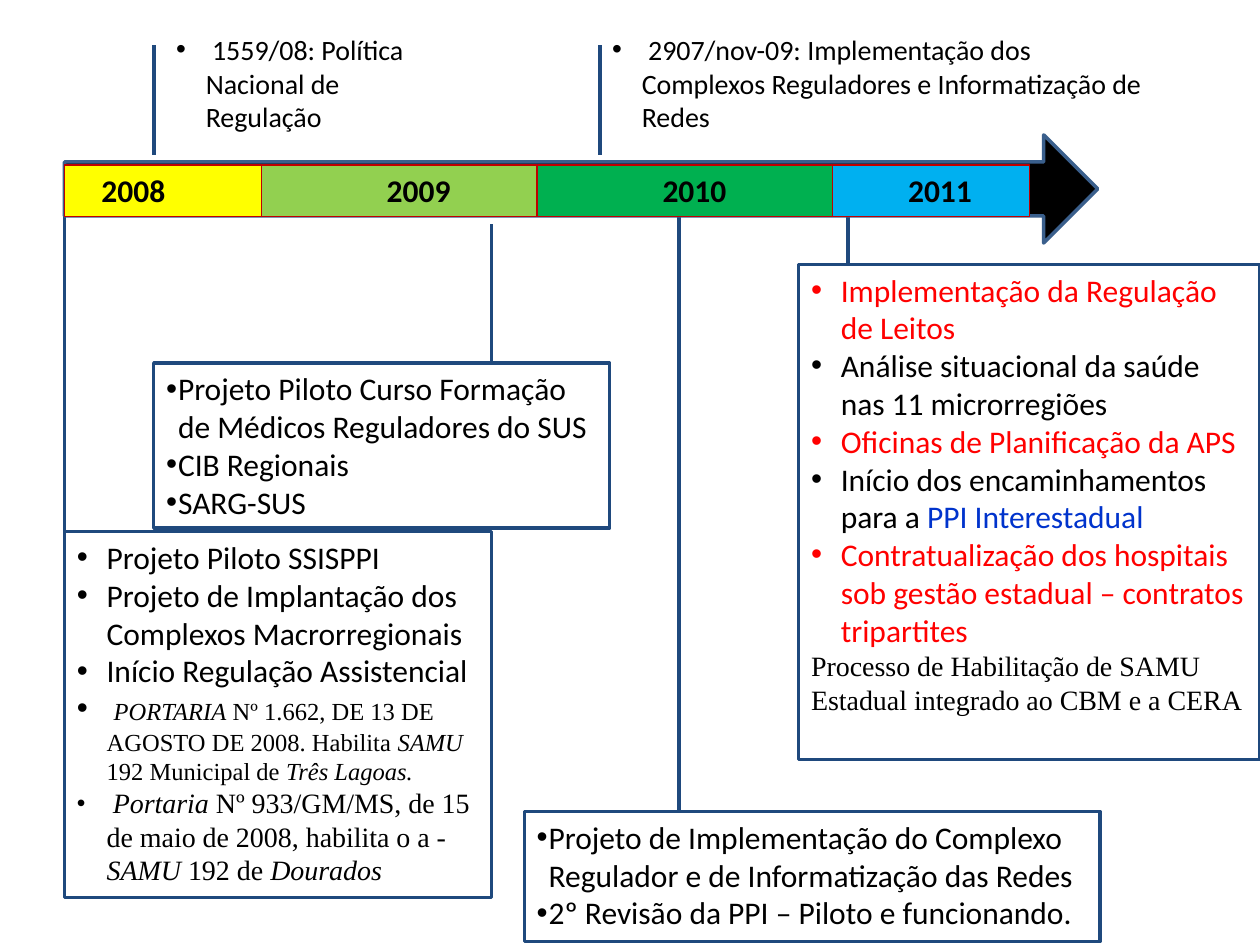
import pptx
import pptx.util
import pptx.dml.color
import pptx.enum.shapes
import pptx.enum.text
import pptx.oxml
import pptx.oxml.ns

Cm = pptx.util.Cm
Pt = pptx.util.Pt
Kind = pptx.enum.shapes.MSO_SHAPE
Align = pptx.enum.text.PP_ALIGN
NAVY, BLACK, RED, BLUE = "1F497D", "000000", "FF0000", "0033CC"
SANS, SERIF = "Calibri", "Times New Roman"


def paint(target, code):
    target.rgb = pptx.dml.color.RGBColor.from_string(code)


def node(tag, **attrs):
    item = pptx.oxml.parse_xml(f"<a:{tag} {pptx.oxml.ns.nsdecls('a')}/>")
    for name, value in attrs.items():
        item.set(name, value)
    return item


def part(text, size=18, font=SANS, color=BLACK, bold=False, slant=False):
    return text, size, font, color, bold, slant


def serif(text, size=14, slant=False):
    return part(text, size, SERIF, slant=slant)


class Board:
    def __init__(self, deck):
        self.slide = deck.slides.add_slide(deck.slide_layouts[6])
        self.shapes = self.slide.shapes

    def line(self, x, top, end, width=2.25):
        link = self.shapes.add_connector(
            pptx.enum.shapes.MSO_CONNECTOR.STRAIGHT, Cm(x), Cm(top), Cm(x), Cm(end))
        paint(link.line.color, NAVY)
        link.line.width = Pt(width)
        link._element.spPr.append(node("effectLst"))

    def shape(self, kind, place, edge, width, fill=None):
        item = self.shapes.add_shape(kind, *map(Cm, place))
        item.shadow.inherit = False
        if fill:
            item.fill.solid()
            paint(item.fill.fore_color, fill)
        else:
            item.fill.background()
        paint(item.line.color, edge)
        item.line.width = Pt(width)
        return item

    def label(self, item, paras, indent=0.6, align=Align.LEFT):
        frame = item.text_frame
        frame.word_wrap = True
        frame.vertical_anchor = pptx.enum.text.MSO_ANCHOR.TOP
        for index, (bullet, parts) in enumerate(paras):
            para = frame.add_paragraph() if index else frame.paragraphs[0]
            para.alignment = align
            if bullet:
                props = para._p.get_or_add_pPr()
                props.set("marL", str(Cm(indent)))
                props.set("indent", str(-Cm(indent)))
                props.append(node("buFont", typeface="Arial"))
                props.append(node("buChar", char="•"))
            for text, size, font, color, bold, slant in parts:
                run = para.add_run()
                run.text = text
                run.font.size = Pt(size)
                run.font.name = font
                run.font.bold = bold
                run.font.italic = slant
                paint(run.font.color, color)

    def text(self, place, paras, **style):
        self.label(self.shapes.add_textbox(*map(Cm, place)), paras, **style)

    def box(self, place, paras, **style):
        self.label(self.shape(Kind.RECTANGLE, place, NAVY, 2), paras, **style)


def items(*texts):
    return [(True, [part(text)]) for text in texts]


def main():
    deck = pptx.Presentation()
    deck.slide_width, deck.slide_height = Cm(25.4), Cm(19.05)
    board = Board(deck)

    board.line(17.09, 4.32, 5.33, 2)
    board.line(13.69, 4.32, 16.33)
    board.line(9.91, 4.52, 7.32, 2)
    board.line(1.3, 4.32, 12.32)
    for x in (12.09, 3.1):
        board.line(x, 0.91, 3.12)

    board.shape(Kind.RIGHT_ARROW, (1.3, 2.72, 20.83, 2.18), "3A5F8C", 2, BLACK)
    years = [("2008", 3.97, "FFFF00", 0.4), ("2009", 5.56, "92D050", 2.18),
             ("2010", 5.95, "00B050", 2.18), ("2011", 3.97, "00B0F0", 1.18)]
    left = 1.3
    for year, width, fill, shift in years:
        board.shape(Kind.RECTANGLE, (left, 3.33, width, 1.04), "C00000", 0.75, fill)
        board.text((left + shift, 3.33, 1.98, 1.02),
                   [(False, [part(year, bold=True)])], align=Align.CENTER)
        left += width

    notes = [(3.3, 5.99, " 1559/08: Política Nacional de Regulação"),
             (12.09, 11.4, " 2907/nov-09: Implementação dos Complexos "
                           "Reguladores e Informatização de Redes")]
    for x, width, text in notes:
        board.text((x, 0.53, width, 1.63), [(True, [part(text, 16)])])

    board.box((1.3, 10.72, 8.61, 7.37), items(
        "Projeto Piloto SSISPPI",
        "Projeto de Implantação dos Complexos Macrorregionais",
        "Início Regulação Assistencial") + [
        (True, [part(" "), serif("PORTARIA", slant=True),
                serif(" Nº 1.662, DE 13 DE AGOSTO DE 2008. Habilita "),
                serif("SAMU", slant=True), serif(" 192 Municipal de "),
                serif("Três Lagoas.", slant=True)]),
        (True, [serif(" ", slant=True), serif("Portaria", 16, True),
                serif(" Nº 933/GM/MS, de 15 de maio de 2008, habilita o a - ", 16),
                serif("SAMU", 16, True), serif(" 192 de ", 16),
                serif("Dourados", 16, True)])])
    board.box((3.1, 7.32, 9.19, 3.33), items(
        "Projeto Piloto Curso Formação de Médicos Reguladores do SUS",
        "CIB Regionais",
        "SARG-SUS"), indent=0.24)
    board.box((10.57, 16.36, 11.61, 2.62), items(
        "Projeto de Implementação do Complexo Regulador e de Informatização das Redes",
        "2º Revisão da PPI – Piloto e funcionando."), indent=0.24)
    board.box((16.1, 5.33, 9.3, 9.98), [
        (True, [part("Implementação da Regulação de Leitos", color=RED)]),
        (True, [part("Análise situacional da saúde nas 11 microrregiões")]),
        (True, [part("Oficinas de Planificação da APS", color=RED)]),
        (True, [part("Início dos encaminhamentos para a "),
                part("PPI Interestadual", color=BLUE)]),
        (True, [part("Contratualização dos hospitais sob gestão estadual "
                     "– contratos tripartites", color=RED)]),
        (False, [serif("Processo de Habilitação de SAMU Estadual "
                       "integrado ao CBM e a CERA", 16)])])

    deck.save("out.pptx")


if __name__ == "__main__":
    main()
